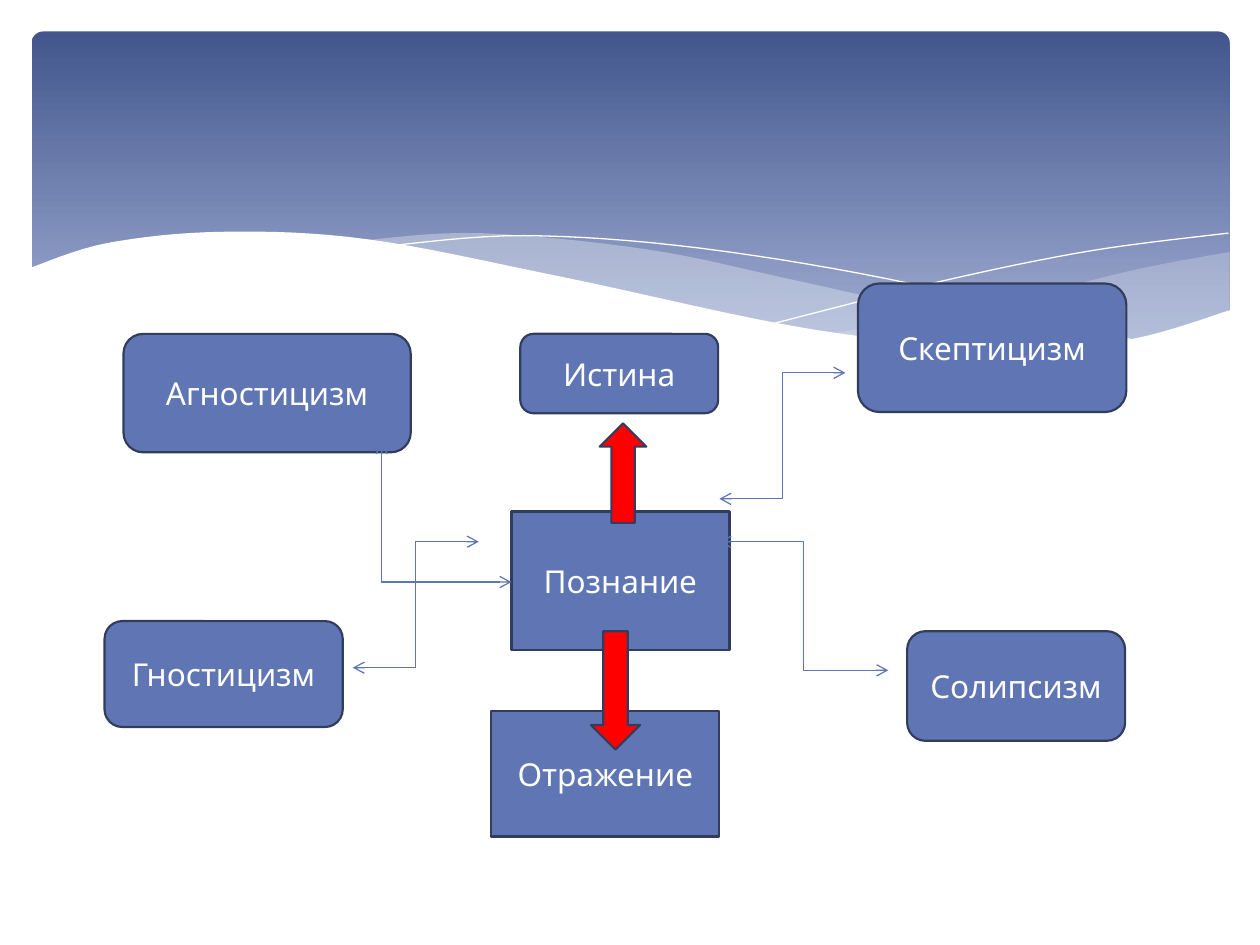
from lxml.etree import SubElement
from pptx import Presentation
from pptx.dml.color import RGBColor
from pptx.enum.shapes import MSO_CONNECTOR, MSO_SHAPE
from pptx.enum.text import MSO_ANCHOR, PP_ALIGN
from pptx.oxml.ns import qn
from pptx.util import Inches, Pt

FONT = "Comic Neue"
COLORS = {
    "top": "42568D", "low": "A0ADD2", "mist": "E4E9EF", "white": "FFFFFF",
    "blue": "6076B4", "edge": "323D5E", "red": "FF0000",
}
RGB = {name: RGBColor.from_string(code) for name, code in COLORS.items()}
STEPS = 8


def add_box(kind, left, top, width, height, fill):
    """Add an outlined preset shape, measured in inches."""
    box = slide.shapes.add_shape(
        kind, Inches(left), Inches(top), Inches(width), Inches(height))
    box.shadow.inherit = False
    box.fill.solid()
    box.fill.fore_color.rgb = RGB[fill]
    box.line.color.rgb = RGB["edge"]
    box.line.width = Pt(1.25)
    return box


def curve(knots):
    """Return points on a smooth (Catmull-Rom) curve through the knots."""
    ends = [knots[0], *knots, knots[-1]]
    points = [knots[0]]
    for quad in zip(ends, ends[1:], ends[2:], ends[3:]):
        for step in range(1, STEPS + 1):
            t = step / STEPS
            points.append(tuple(
                b + t / 2 * (c - a + t * (2 * a - 5 * b + 4 * c - d
                                          + t * (3 * b - a - 3 * c + d)))
                for a, b, c, d in zip(*quad)))
    return points


prs = Presentation()
prs.slide_width, prs.slide_height = Inches(10), Inches(7.5)
slide = prs.slides.add_slide(prs.slide_layouts[6])

# Banner with a vertical gradient
banner = add_box(MSO_SHAPE.ROUNDED_RECTANGLE, 0.25, 0.25, 9.51, 2.7, "top")
banner.adjustments[0] = 0.034
banner.line.fill.background()
banner.fill.gradient()
banner.fill.gradient_angle = 270
for stop, name, place in zip(banner.fill.gradient_stops, ("top", "low"), (0, 0.9)):
    stop.color.rgb = RGB[name]
    stop.position = place

# Waves: fill, opacity in percent, curves; those without a fill are white lines
waves = [
    ("mist", 29, [
        [(9.76, 2), (9.06, 2.13), (8.05, 2.37), (6.61, 2.65)],
        [(6.61, 2.65), (7.32, 2.74), (8.03, 2.78), (8.97, 2.7), (9.76, 2.47)]]),
    ("mist", 40, [
        [(8.93, 2.73), (7.75, 2.54), (6.29, 2.22), (5.14, 1.98), (3.8, 1.85),
         (2.86, 1.91)],
        [(2.86, 1.91), (4.49, 2.22), (6.18, 2.58), (7.48, 2.76), (8.93, 2.73)]]),
    (None, 100, [
        [(3.09, 1.95), (4.16, 1.87), (5.56, 1.97), (7.27, 2.26), (9.07, 2.72)]]),
    (None, 100, [[(6.13, 2.57), (7.48, 2.23), (8.66, 1.99), (9.75, 1.85)]]),
    ("white", 100, [
        [(9.77, 2.46), (8.99, 2.69), (8.09, 2.77), (6.48, 2.62), (4.47, 2.2),
         (2.92, 1.9), (1.77, 1.84), (0.85, 1.93), (0.23, 2.13)],
        [(0.23, 3.29), (9.77, 3.29)]]),
]
for fill, alpha, curves in waves:
    start, *rest = [(Inches(x), Inches(y))
                    for knots in curves for x, y in curve(knots)]
    outline = slide.shapes.build_freeform(*start)
    outline.add_line_segments(rest, close=fill is not None)
    wave = outline.convert_to_shape()
    wave.shadow.inherit = False
    if fill is None:
        wave.fill.background()
        wave.line.color.rgb = RGB["white"]
        wave.line.width = Pt(0)
        continue
    wave.line.fill.background()
    wave.fill.solid()
    wave.fill.fore_color.rgb = RGB[fill]
    if alpha < 100:
        color = wave._element.spPr.find(qn("a:solidFill")).find(qn("a:srgbClr"))
        SubElement(color, qn("a:alpha"), val=str(alpha * 1000))

# Terms
rect, rounded = MSO_SHAPE.RECTANGLE, MSO_SHAPE.ROUNDED_RECTANGLE
terms = [
    ("Познание", rect, 4.06, 4.06, 1.73, 1.1),
    ("Отражение", rect, 3.9, 5.64, 1.81, 1),
    ("Гностицизм", rounded, 0.83, 4.93, 1.89, 0.84),
    ("Агностицизм", rounded, 0.98, 2.65, 2.28, 0.94),
    ("Скептицизм", rounded, 6.81, 2.25, 2.13, 1.02),
    ("Солипсизм", rounded, 7.2, 5.01, 1.73, 0.87),
    ("Истина", rounded, 4.13, 2.65, 1.57, 0.63),
]
for term, kind, *place in terms:
    box = add_box(kind, *place, "blue")
    frame = box.text_frame
    frame.word_wrap = True
    frame.vertical_anchor = MSO_ANCHOR.MIDDLE
    para = frame.paragraphs[0]
    para.alignment = PP_ALIGN.CENTER
    run = para.add_run()
    run.text = term
    run.font.name = FONT
    run.font.size = Pt(18)
    run.font.color.rgb = RGB["white"]

# Elbow links with an arrowhead at both ends
links = [
    ("bentConnector3", 2.8, 5.3, 3.8, 4.3),
    ("bentConnector3", 5.71, 3.96, 6.71, 2.96),
    ("bentConnector3", 5.71, 4.3, 7.05, 5.32),
    ("bentConnector2", 4.06, 4.62, 3.03, 3.51),
]
for bend, *ends in links:
    link = slide.shapes.add_connector(MSO_CONNECTOR.ELBOW, *map(Inches, ends))
    link.line.color.rgb = RGB["blue"]
    link.line.width = Pt(0.75)
    props = link._element.spPr
    props.find(qn("a:prstGeom")).set("prst", bend)
    for end in ("a:headEnd", "a:tailEnd"):
        SubElement(props.find(qn("a:ln")), qn(end), type="arrow")
    SubElement(props, qn("a:effectLst"))

# Red arrows
add_box(MSO_SHAPE.UP_ARROW, 4.76, 3.36, 0.37, 0.79, "red")
add_box(MSO_SHAPE.DOWN_ARROW, 4.69, 5.01, 0.39, 0.94, "red")

prs.save("out.pptx")
